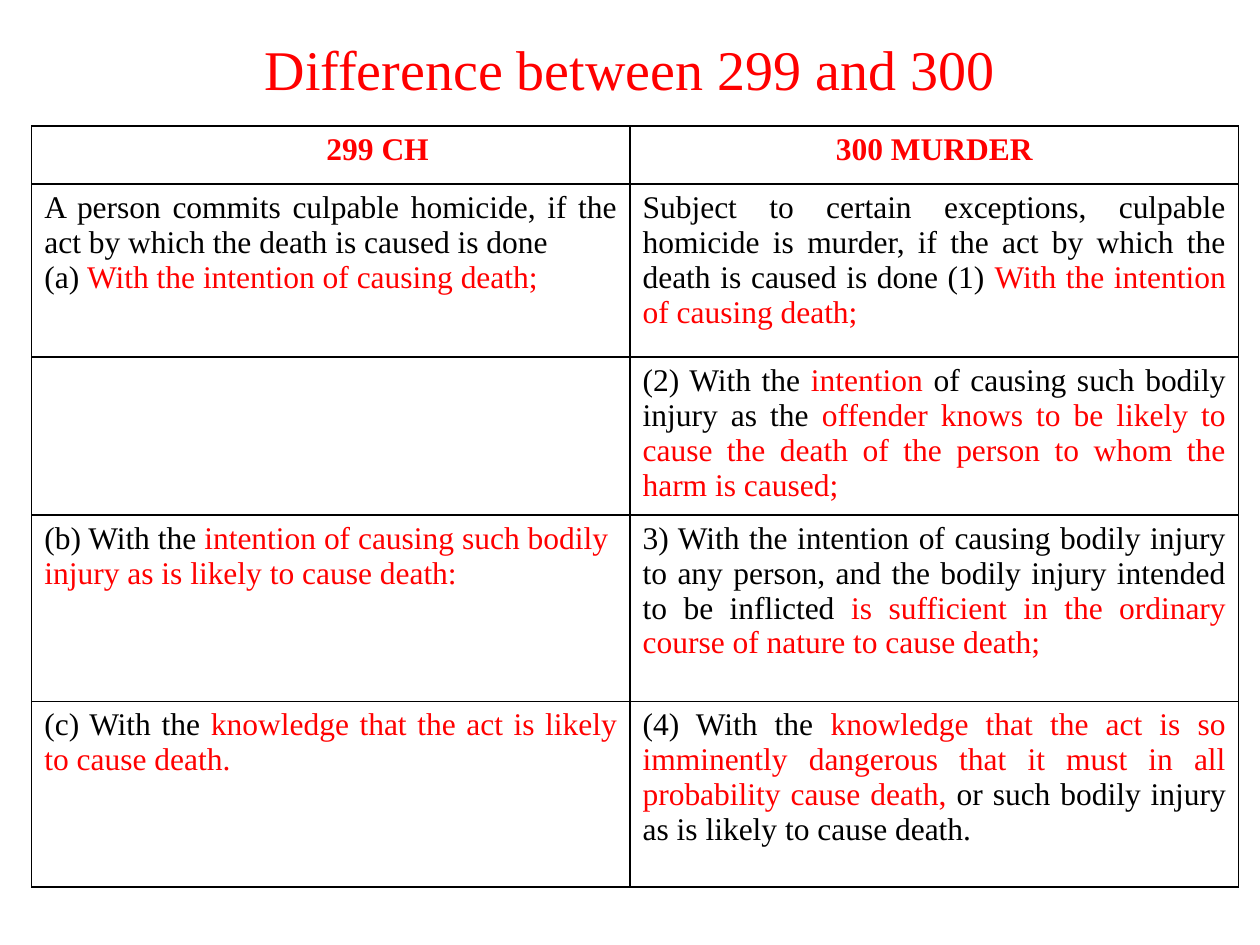
from lxml import etree
from pptx import Presentation
from pptx.dml.color import RGBColor
from pptx.enum import text
from pptx.oxml import ns
from pptx.util import Cm, Pt

RED = RGBColor(0xFF, 0x00, 0x00)
BLACK = RGBColor(0x00, 0x00, 0x00)
FONT = "Times New Roman"
LEFT, CENTER, JUSTIFY = text.PP_ALIGN.LEFT, text.PP_ALIGN.CENTER, text.PP_ALIGN.JUSTIFY


def add_span(para, words, size, color, bold=False):
    span = para.add_run()
    span.text = words
    span.font.name = FONT
    span.font.size = Pt(size)
    span.font.bold = bold
    span.font.color.rgb = color


def add_borders(cell):
    properties = cell._tc.get_or_add_tcPr()
    for position, side in enumerate(("lnL", "lnR", "lnT", "lnB")):
        line = etree.Element(ns.qn(f"a:{side}"), w=str(Pt(1)))
        fill = etree.SubElement(line, ns.qn("a:solidFill"))
        etree.SubElement(fill, ns.qn("a:srgbClr"), val=str(BLACK))
        properties.insert(position, line)


deck = Presentation()
deck.slide_width, deck.slide_height = Cm(25.4), Cm(19.05)
page = deck.slides.add_slide(deck.slide_layouts[5])

title = page.shapes.title
title.left, title.top, title.width, title.height = Cm(1.27), Cm(0), Cm(22.86), Cm(2.74)
title.text_frame.vertical_anchor = text.MSO_ANCHOR.MIDDLE
para = title.text_frame.paragraphs[0]
para.alignment = CENTER
add_span(para, "Difference between 299 and 300", 32, RED)

rows = [
    [
        [(CENTER, [("299 CH", RED)])],
        [(CENTER, [("300 MURDER", RED)])],
    ],
    [
        [
            (JUSTIFY, [("A person commits culpable homicide, if the act by which "
                        "the death is caused is done", BLACK)]),
            (LEFT, [("(a) ", BLACK), ("With the intention of causing death;", RED)]),
        ],
        [(JUSTIFY, [
            ("Subject to certain exceptions, culpable homicide is murder, if the act "
             "by which the death is caused is done (1) ", BLACK),
            ("With the intention of causing death;", RED),
        ])],
    ],
    [
        [],
        [(JUSTIFY, [
            ("(2) With the ", BLACK),
            ("intention", RED),
            (" of causing such bodily injury as the ", BLACK),
            ("offender knows to be likely to cause the death of the person "
             "to whom the harm is caused;", RED),
        ])],
    ],
    [
        [(LEFT, [
            ("(b) With the ", BLACK),
            ("intention of causing such bodily injury as is likely to cause death:", RED),
        ])],
        [(JUSTIFY, [
            ("3) With the intention of causing bodily injury to any person, and the "
             "bodily injury intended to be inflicted ", BLACK),
            ("is sufficient in the ordinary course of nature to cause death;", RED),
        ])],
    ],
    [
        [(JUSTIFY, [
            ("(c) With the ", BLACK),
            ("knowledge that the act is likely to cause death.", RED),
        ])],
        [(JUSTIFY, [
            ("(4) With the ", BLACK),
            ("knowledge that the act is so imminently dangerous that it must in all "
             "probability cause death, ", RED),
            ("or such bodily injury as is likely to cause death.", BLACK),
        ])],
    ],
]
widths = [12.06, 12.27]
heights = [1.17, 3.49, 3.18, 3.76, 3.74]

table = page.shapes.add_table(
    len(rows), len(widths), Cm(0.64), Cm(2.54), Cm(sum(widths)), Cm(sum(heights))
).table
table.first_row = False
table.horz_banding = False
for column, width in zip(table.columns, widths):
    column.width = Cm(width)

for row_number, (row, height) in enumerate(zip(rows, heights)):
    table.rows[row_number].height = Cm(height)
    for column_number, paragraphs in enumerate(row):
        cell = table.cell(row_number, column_number)
        cell.fill.background()
        add_borders(cell)
        for number, (alignment, spans) in enumerate(paragraphs):
            frame = cell.text_frame
            para = frame.add_paragraph() if number else frame.paragraphs[0]
            para.alignment = alignment
            for words, color in spans:
                add_span(para, words, 18, color, bold=row_number == 0)

table.cell(0, 0).margin_left = Cm(2.14)

deck.save("out.pptx")
